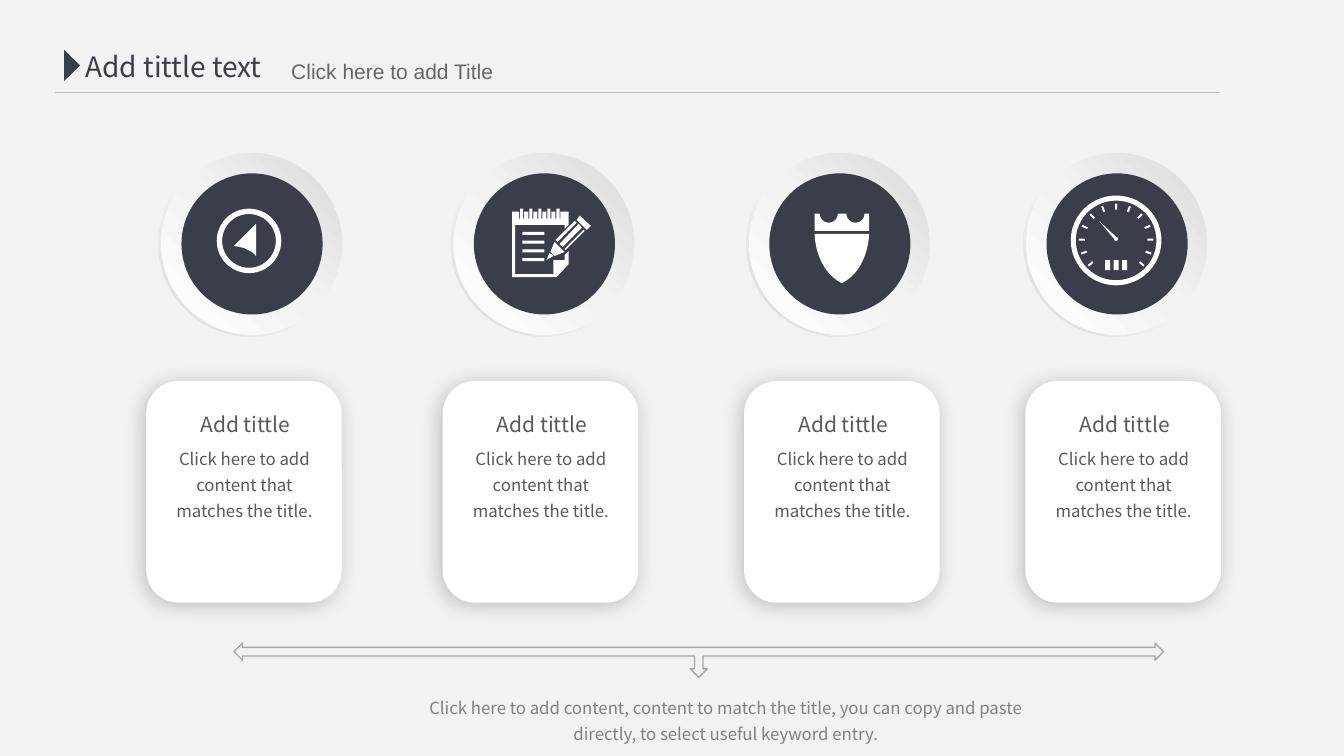
from math import cos, pi, radians, sin

from lxml import etree
from pptx import Presentation
from pptx.dml.color import RGBColor
from pptx.enum.shapes import MSO_CONNECTOR, MSO_SHAPE as Preset
from pptx.enum.text import MSO_AUTO_SIZE as AutoSize, PP_ALIGN as Align
from pptx.oxml import parse_xml
from pptx.oxml.ns import nsdecls, qn
from pptx.util import Inches, Pt

COLORS = {
    "page": "F2F2F2", "navy": "3A3E4A", "white": "FFFFFF", "rim": "D9D9D9",
    "rule": "BFBFBF", "arrow": "A6A6A6", "subtitle": "666666",
    "body": "595959", "caption": "808080", "shadow": "000000",
}
SANS = "Noto Sans CJK SC"

prs = Presentation()
prs.slide_width, prs.slide_height = Inches(13.33), Inches(7.5)
slide = prs.slides.add_slide(prs.slide_layouts[6])
shapes = slide.shapes
slide.background.fill.solid()
slide.background.fill.fore_color.rgb = RGBColor.from_string(COLORS["page"])


def add_text(text, box, size=12, color="body", font=SANS, align=Align.CENTER,
             spacing=1.0, inset=(0.1, 0.05)):
    textbox = shapes.add_textbox(*map(Inches, box))
    frame = textbox.text_frame
    frame.word_wrap = True
    frame.auto_size = AutoSize.SHAPE_TO_FIT_TEXT
    frame.margin_left = frame.margin_right = Inches(inset[0])
    frame.margin_top = frame.margin_bottom = Inches(inset[1])
    line = frame.paragraphs[0]
    line.alignment, line.line_spacing = align, spacing
    run = line.add_run()
    run.text = text
    run.font.size, run.font.name = Pt(size), font
    run.font.color.rgb = RGBColor.from_string(COLORS[color])
    props = run._r.get_or_add_rPr()
    etree.SubElement(props, qn("a:ea")).set("typeface", font)


def add_filled(preset, box, color="white", gradient=None, angle=0):
    shape = shapes.add_shape(preset, *map(Inches, box))
    shape.shadow.inherit = False
    shape.line.fill.background()
    if gradient:
        stops = "".join(
            f'<a:gs pos="{pos * 1000}"><a:srgbClr val="{COLORS[name]}"/></a:gs>'
            for pos, name in gradient)
        shape._element.spPr.find(qn("a:prstGeom")).addnext(parse_xml(
            f'<a:gradFill {nsdecls("a")} rotWithShape="1"><a:gsLst>{stops}</a:gsLst>'
            f'<a:lin ang="{angle * 60000}" scaled="0"/></a:gradFill>'))
    else:
        shape.fill.solid()
        shape.fill.fore_color.rgb = RGBColor.from_string(COLORS[color])
    return shape


# Header
header_rule = shapes.add_connector(
    MSO_CONNECTOR.STRAIGHT, Inches(0.55), Inches(0.92), Inches(12.1), Inches(0.92))
header_rule.line.color.rgb = RGBColor.from_string(COLORS["rule"])
header_rule.line.width = Pt(0.75)
etree.SubElement(header_rule._element.spPr, qn("a:effectLst"))
add_text("Add tittle text", (0.75, 0.44, 2.14, 0.44), size=20, color="navy",
         align=Align.LEFT)
add_filled(Preset.ISOSCELES_TRIANGLE, (0.56, 0.57, 0.31, 0.16), "navy").rotation = 90
add_text("Click here to add Title", (2.79, 0.53, 2.71, 0.35), size=15,
         color="subtitle", font="Arial", align=Align.LEFT)

# Cards with the round badges above them
for card_x, badge_x in [(1.45, 1.57), (4.39, 4.47), (7.38, 7.4), (10.17, 10.15)]:
    card = add_filled(Preset.ROUNDED_RECTANGLE, (card_x, 3.78, 1.94, 2.2))
    card._element.spPr.find(qn("a:effectLst")).append(parse_xml(
        f'<a:outerShdw {nsdecls("a")} blurRad="{Pt(15)}" dist="{Pt(3)}" '
        f'dir="8100000" algn="ctr" rotWithShape="0"><a:srgbClr val="{COLORS["shadow"]}">'
        '<a:alpha val="22000"/></a:srgbClr></a:outerShdw>'))
    add_text("Click here to add content that matches the title.",
             (card_x + 0.08, 4.34, 1.79, 0.86), spacing=1.3)
    add_text("Add tittle", (card_x + 0.25, 3.96, 1.47, 0.33), size=15,
             spacing=1.5, inset=(0.1, 0))

    rim = add_filled(Preset.DONUT, (badge_x, 1.49, 1.84, 1.85), angle=135,
                     gradient=[(0, "page"), (55, "page"), (100, "rim")])
    rim.adjustments[0] = 0.049
    add_filled(Preset.OVAL, (badge_x + 0.03, 1.52, 1.79, 1.8), angle=315,
               gradient=[(0, "white"), (51, "page"), (100, "rim")])
    add_filled(Preset.OVAL, (badge_x + 0.23, 1.72, 1.4, 1.4), "navy")

# Rings of the compass and the gauge
for ring_box, thickness in [((2.15, 2.07, 0.64, 0.64), 0.083),
                            ((10.62, 1.94, 0.9, 0.89), 0.056)]:
    add_filled(Preset.DONUT, ring_box).adjustments[0] = thickness

# Gauge: scale ticks, counter digits and hub
for step in range(-6, 7):
    turn = radians(22 * step)
    tick_x, tick_y = 11.07 + 0.34 * sin(turn), 2.39 - 0.34 * cos(turn)
    tick = add_filled(Preset.RECTANGLE, (tick_x - 0.01, tick_y - 0.03, 0.02, 0.06))
    tick.rotation = 22 * step
for digit in range(3):
    add_filled(Preset.RECTANGLE, (10.96 + 0.085 * digit, 2.58, 0.05, 0.1))
add_filled(Preset.OVAL, (11.05, 2.35, 0.04, 0.04))

# Notepad: written lines, then the binding teeth of its outline
for row in range(4):
    add_filled(Preset.RECTANGLE, (5.18, 2.3 + 0.087 * row, 0.22, 0.03))
teeth = []
for tooth in range(5):
    x = 5.55 - 0.09 * tooth
    teeth += [(x + 0.01, 2.1), (x + 0.01, 2.17), (x, 2.17), (x, 2.07),
              (x - 0.03, 2.07), (x - 0.03, 2.17), (x - 0.04, 2.17), (x - 0.04, 2.1)]

# Shield: curved flank as (half width, height), and the notches of its crown
flank = []
for i in range(17):
    t = i / 16
    u = 1 - t
    flank.append((0.27 * (1 - u ** 3),
                  2.81 * u ** 3 + 3 * 2.67 * t * u * u + 2.32 * (3 * t * t * u + t ** 3)))
notches = [(center + 0.09 * cos(pi * i / 12), 2.12 + 0.09 * sin(pi * i / 12))
           for center in (8.485, 8.22) for i in range(13)]

icon_outlines = {
    "compass needle": [(2.54, 2.54), (2.54, 2.22), (2.32, 2.44), (2.42, 2.46), (2.5, 2.5)],
    "gauge needle": [(10.9, 2.19), (11.07, 2.35), (11.05, 2.37)],
    "pencil lower edge": [(5.6, 2.47), (5.61, 2.48), (5.8, 2.29), (5.79, 2.28)],
    "pencil body": [(5.74, 2.22), (5.55, 2.42), (5.58, 2.45), (5.77, 2.26)],
    "pencil upper edge": [(5.51, 2.38), (5.53, 2.4), (5.72, 2.21), (5.7, 2.19)],
    "pencil wood": [(5.6, 2.5), (5.5, 2.4), (5.46, 2.5), (5.5, 2.54)],
    "pencil lead": [(5.42, 2.58), (5.49, 2.54), (5.45, 2.51)],
    "pencil eraser": [(5.75, 2.14), (5.72, 2.18), (5.82, 2.28), (5.86, 2.24)],
    "notepad": [(5.6, 2.58), (5.49, 2.58), (5.49, 2.72), (5.11, 2.72), (5.11, 2.23),
                (5.6, 2.23), (5.6, 2.27), (5.64, 2.23), (5.64, 2.1), *teeth,
                (5.08, 2.1), (5.08, 2.75), (5.52, 2.75), (5.64, 2.62), (5.64, 2.49),
                (5.6, 2.53)],
    "shield": [(8.35 + dx, y) for dx, y in flank]
              + [(8.35 - dx, y) for dx, y in reversed(flank)],
    "shield crown": [(8.62, 2.12), *notches, (8.08, 2.12), (8.08, 2.29), (8.62, 2.29)],
}
for outline in icon_outlines.values():
    start, *corners = [(Inches(x), Inches(y)) for x, y in outline]
    builder = shapes.build_freeform(*start)
    builder.add_line_segments(corners, close=True)
    icon = builder.convert_to_shape()
    icon.shadow.inherit = False
    icon.fill.solid()
    icon.fill.fore_color.rgb = RGBColor.from_string(COLORS["white"])
    icon.line.fill.background()

# Summary below the cards
add_text("Click here to add content, content to match the title, you can copy and "
         "paste directly, to select useful keyword entry.",
         (3.98, 6.83, 6.44, 0.56), color="caption", spacing=1.3, inset=(0.06, 0.03))
summary_arrow = add_filled(Preset.LEFT_RIGHT_UP_ARROW, (2.32, 6.38, 9.22, 0.34))
summary_arrow.rotation = 180
summary_arrow.fill.background()
summary_arrow.line.color.rgb = RGBColor.from_string(COLORS["arrow"])
summary_arrow.line.width = Pt(1)

prs.save("out.pptx")
